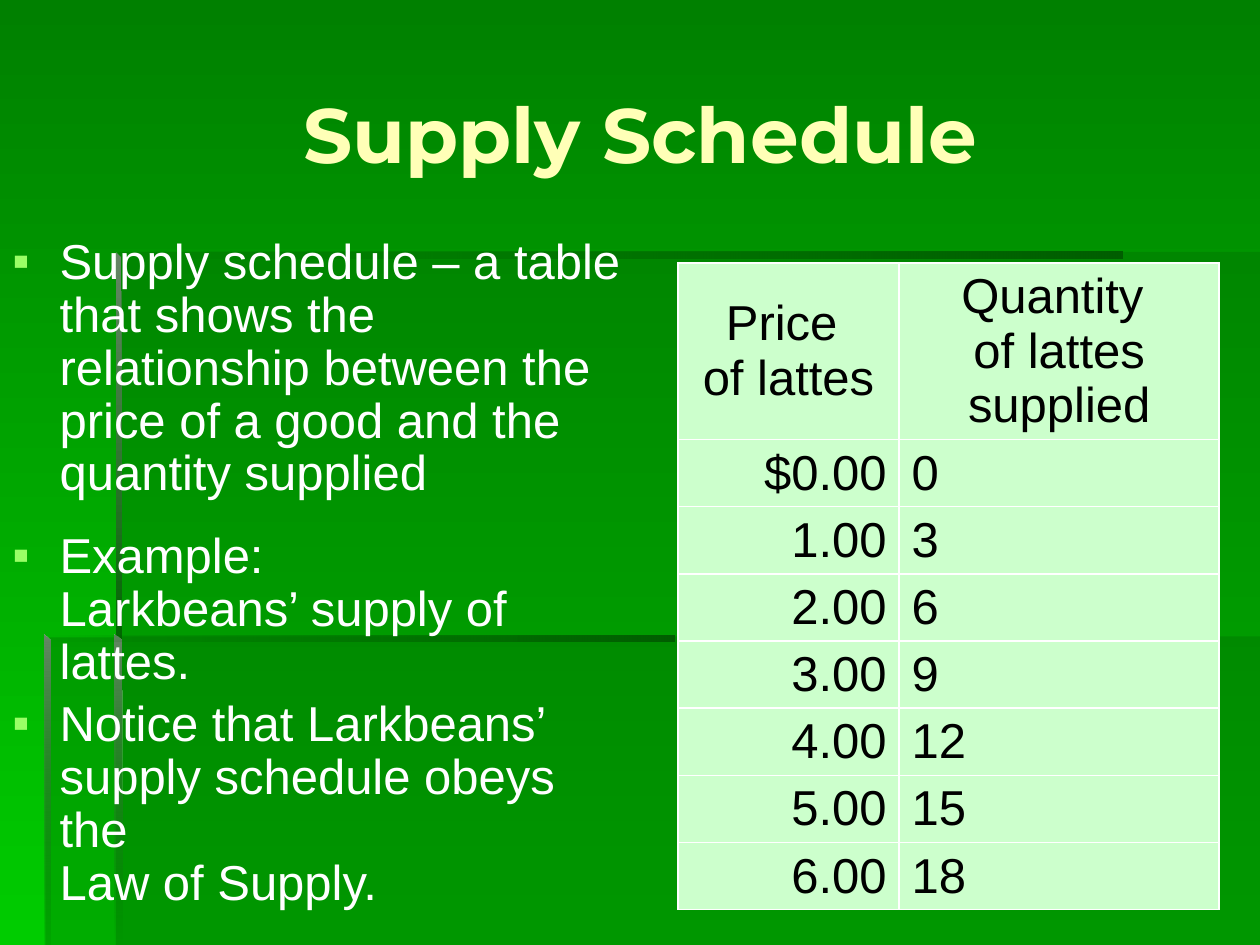
from dataclasses import dataclass
from lxml import etree
from pptx import Presentation
from pptx.dml.color import RGBColor
from pptx.enum import text as tx
from pptx.oxml.ns import qn
from pptx.util import Pt


@dataclass(frozen=True)
class Theme:
    top: str = "008000"
    low: str = "00CC00"
    dark: str = "006600"
    edge: str = "005E00"
    pale: str = "668666"
    head: str = "FFFFB7"
    white: str = "FFFFFF"
    mark: str = "99FF66"
    cell: str = "CCFFCC"
    black: str = "000000"
    title: int = 44
    body: int = 28
    face: str = "Arial"
    bold: str = "Montserrat"


T = Theme()
WIDE, HIGH = 720, 540

TITLE = "Supply Schedule"
POINTS = [
    ("Supply schedule – a table that shows the relationship between "
     "the price of a good and the quantity supplied", 0.2),
    ("Example:\nLarkbeans’ supply of lattes.", 0.6),
    ("Notice that Larkbeans’ supply schedule obeys the\nLaw of Supply.", 0.2),
]
HEADS = ["Price \nof lattes", "Quantity \nof lattes supplied"]
PRICES = ["$0.00", "1.00", "2.00", "3.00", "4.00", "5.00", "6.00"]
COUNTS = ["0", "3", "6", "9", "12", "15", "18"]

PANELS = [
    [(66.2, 363.6), (66.2, HIGH), (WIDE, HIGH), (WIDE, 363.6)],
    [(67.7, 364.3), (26, 364.3), (26, HIGH), (WIDE, HIGH), (WIDE, 144), (67.7, 144)],
]
FADE = [(T.dark, 0), (T.edge, 100)]
BARS = [
    ([(66.2, 144), (66.2, 147.6), (641.5, 147.6), (641.5, 144)], FADE, 0),
    ([(66.2, 144), (66.2, 367.2), (69.8, 367.2), (69.1, 146.9)],
     [(T.pale, 100), (T.dark, 100)], 270),
    ([(65.5, HIGH), (69.8, HIGH), (69.1, 365.8), (65.5, 362.9)],
     [(T.pale, 100), (T.dark, 0)], 270),
    ([(25.2, 362.9), (25.2, 366.5), (385.2, 366.5), (385.2, 362.9)], FADE, 0),
    ([(25.2, 362.9), (25.2, HIGH), (28.8, HIGH), (28.8, 366.5)],
     [(T.pale, 100), (T.dark, 10)], 270),
]


def rgb(code):
    return RGBColor.from_string(code)


def fade(fill, stops, turn):
    fill.gradient()
    fill.gradient_angle = turn
    for stop, (code, _) in zip(fill.gradient_stops, stops):
        stop.color.rgb = rgb(code)


def veil(shape, levels):
    for node, level in zip(shape._element.spPr.iter(qn("a:srgbClr")), levels):
        if level < 100:
            etree.SubElement(node, qn("a:alpha"), val=str(level * 1000))


def trace(slide, spots):
    spots = [(Pt(x), Pt(y)) for x, y in spots]
    pen = slide.shapes.build_freeform(*spots[0], scale=1.0)
    pen.add_line_segments(spots[1:], close=True)
    shape = pen.convert_to_shape()
    shape.shadow.inherit = False
    shape.line.fill.background()
    return shape


def write(para, words, size, code, face, bold=False):
    for i, part in enumerate(words.split("\n")):
        if i:
            para.add_line_break()
        run = para.add_run()
        run.text = part
        font = run.font
        font.size, font.name, font.bold = Pt(size), face, bold
        font.color.rgb = rgb(code)


def bullet(para):
    props = para._p.get_or_add_pPr()
    props.set("marL", str(Pt(27)))
    props.set("indent", str(Pt(-27)))
    tint = etree.SubElement(props, qn("a:buClr"))
    etree.SubElement(tint, qn("a:srgbClr"), val=T.mark)
    etree.SubElement(props, qn("a:buFont"), typeface=T.face)
    etree.SubElement(props, qn("a:buChar"), char="▪")


def box(slide, *area):
    frame = slide.shapes.add_textbox(*map(Pt, area)).text_frame
    frame.word_wrap = True
    return frame


def border(cell, sides):
    props = cell._tc.get_or_add_tcPr()
    for i, side in enumerate(sides):
        line = etree.Element(qn("a:" + side), w=str(Pt(1)))
        fill = etree.SubElement(line, qn("a:solidFill"))
        etree.SubElement(fill, qn("a:srgbClr"), val=T.white)
        props.insert(i, line)


def fill_table(slide):
    rows = [HEADS, *zip(PRICES, COUNTS)]
    highs = [100.5] + [38.4] * len(PRICES)
    wides = [126.5, 182.9]
    frame = slide.shapes.add_table(
        len(rows), 2, Pt(387.3), Pt(150.3), Pt(sum(wides)), Pt(sum(highs)))
    table = frame.table
    for col, wide in zip(table.columns, wides):
        col.width = Pt(wide)
    for r, (row, high) in enumerate(zip(rows, highs)):
        table.rows[r].height = Pt(high)
        for c, words in enumerate(row):
            cell = table.cell(r, c)
            cell.fill.solid()
            cell.fill.fore_color.rgb = rgb(T.cell)
            cell.vertical_anchor = tx.MSO_ANCHOR.MIDDLE
            cell.margin_top = cell.margin_bottom = Pt(2 if r else 0)
            border(cell, ["lnL", "lnR", "lnT", "lnB"])
            para = cell.text_frame.paragraphs[0]
            side = tx.PP_ALIGN.LEFT if c else tx.PP_ALIGN.RIGHT
            para.alignment = side if r else tx.PP_ALIGN.CENTER
            write(para, words, T.body, T.black, T.face)


def main():
    deck = Presentation()
    deck.slide_width, deck.slide_height = Pt(WIDE), Pt(HIGH)
    slide = deck.slides.add_slide(deck.slide_layouts[6])
    fade(slide.background.fill, [(T.top, 100), (T.low, 100)], 270)

    for spots in PANELS:
        shape = trace(slide, spots)
        shape.fill.solid()
        shape.fill.fore_color.rgb = rgb(T.dark)
        veil(shape, [30])
    for spots, stops, turn in BARS:
        shape = trace(slide, spots)
        fade(shape.fill, stops, turn)
        veil(shape, [level for _, level in stops])

    frame = box(slide, 36, 19.4, 660, 113)
    frame.vertical_anchor = tx.MSO_ANCHOR.MIDDLE
    para = frame.paragraphs[0]
    para.alignment = tx.PP_ALIGN.CENTER
    write(para, TITLE, T.title, T.head, T.bold, True)

    frame = box(slide, 0, 131.8, 369.4, 408)
    for i, (words, gap) in enumerate(POINTS):
        para = frame.add_paragraph() if i else frame.paragraphs[0]
        para.line_spacing = 0.9
        para.space_before = Pt(gap * T.body)
        bullet(para)
        write(para, words, T.body, T.white, T.face)

    fill_table(slide)
    deck.save("out.pptx")


if __name__ == "__main__":
    main()
